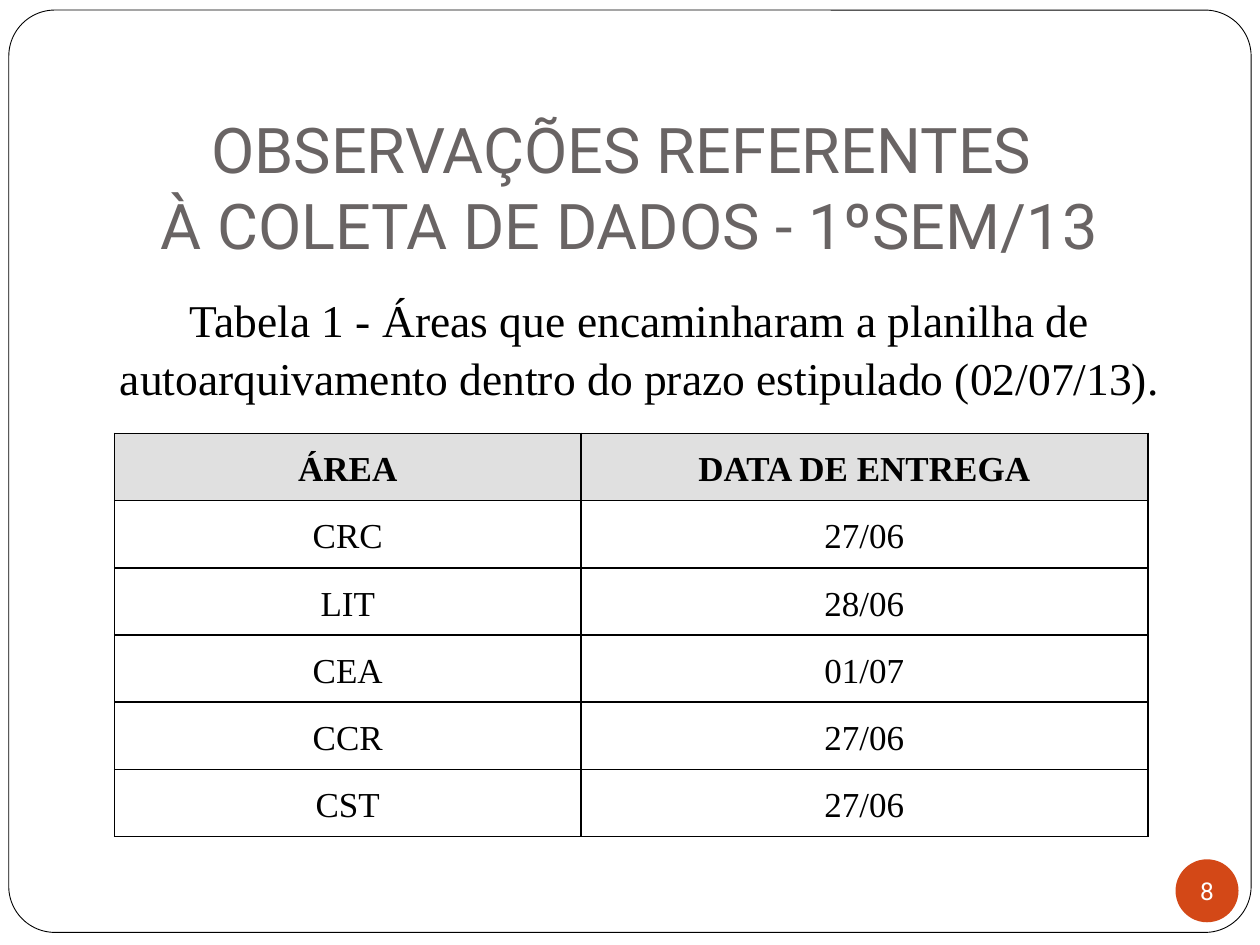
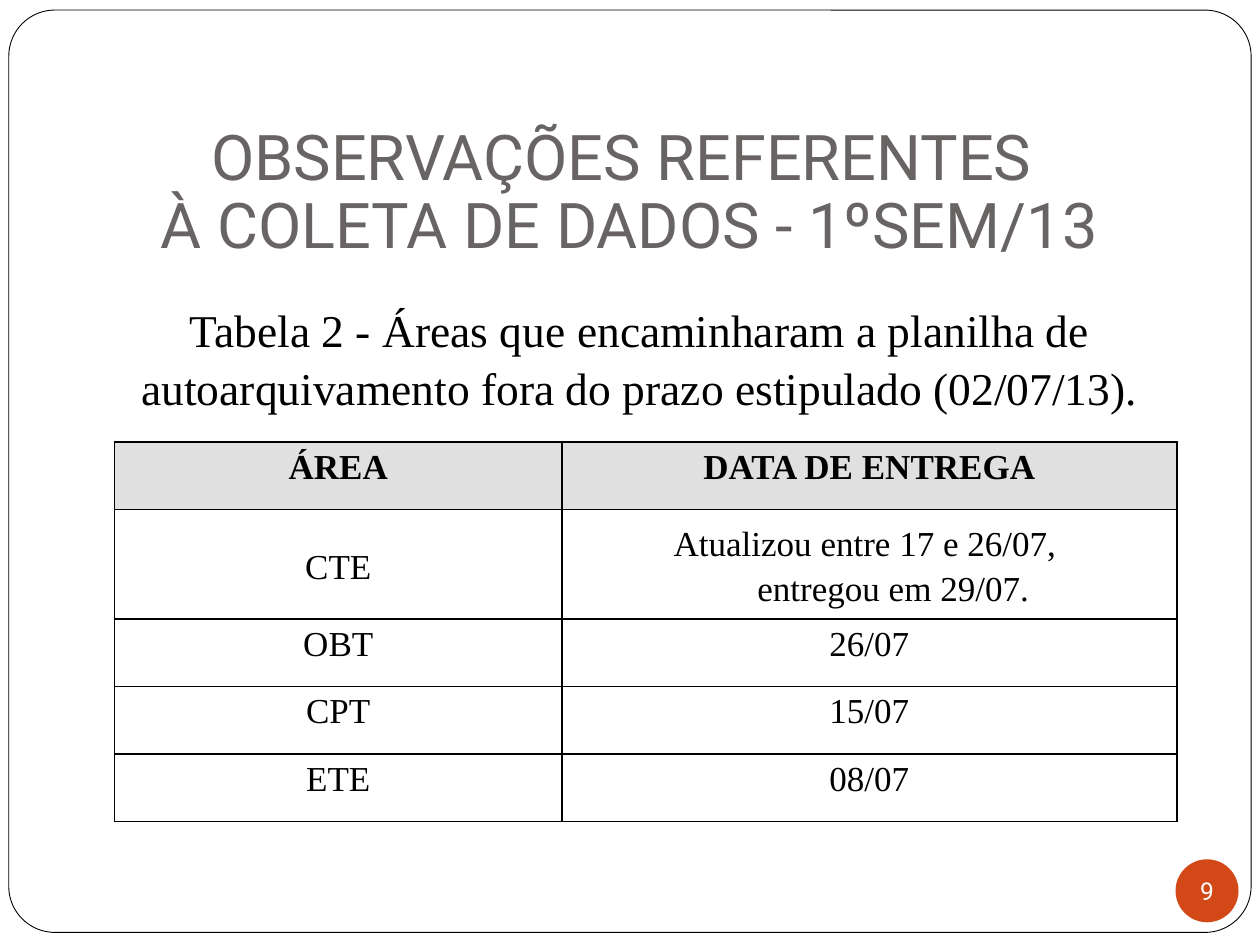
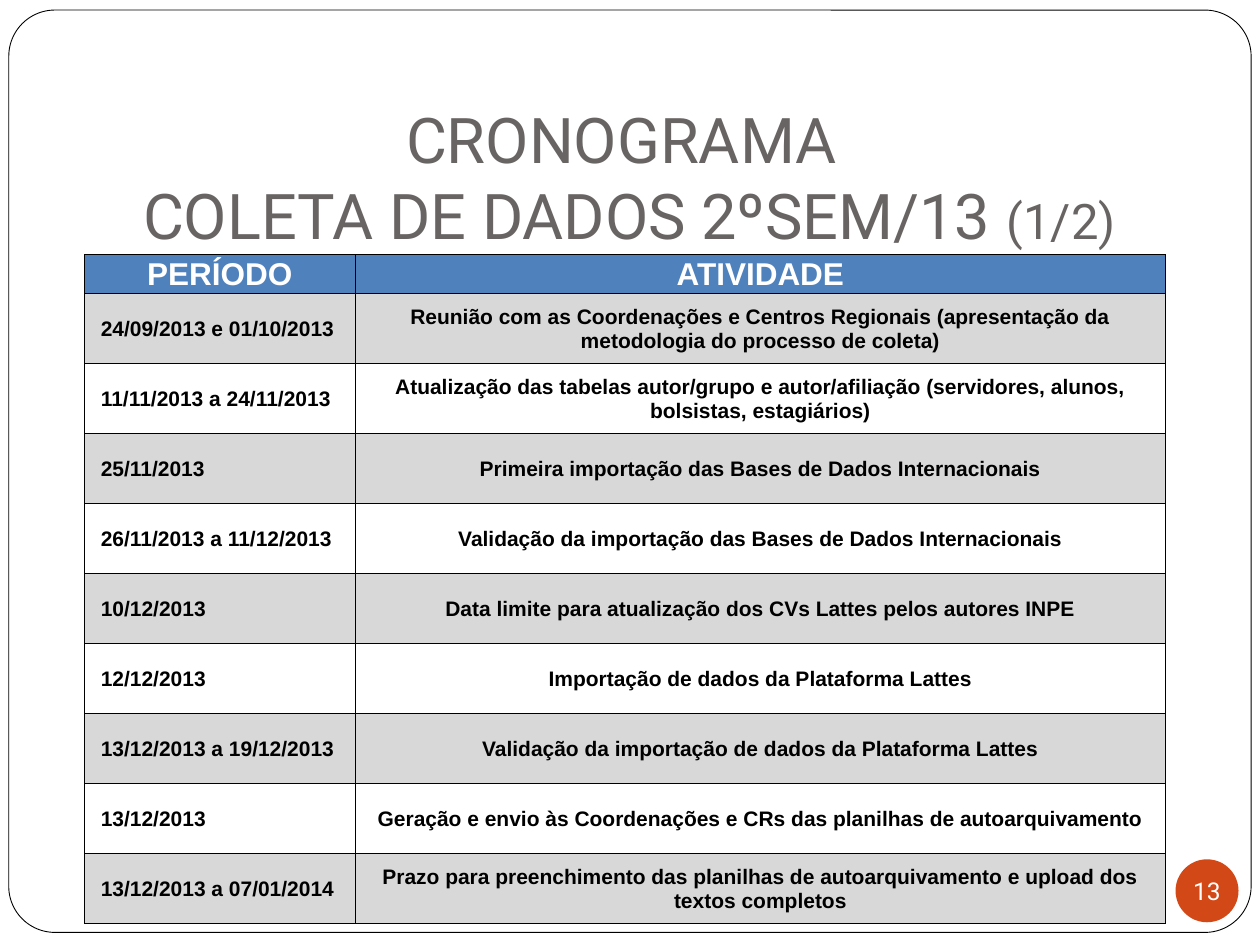
from dataclasses import dataclass

from lxml import etree
from pptx import Presentation
from pptx.dml.color import RGBColor
from pptx.enum.shapes import MSO_SHAPE
from pptx.enum.text import MSO_ANCHOR, PP_ALIGN
from pptx.oxml.ns import qn
from pptx.util import Inches, Pt


@dataclass(frozen=True)
class Theme:
    white: RGBColor = RGBColor.from_string("FFFFFF")
    black: RGBColor = RGBColor.from_string("000000")
    title_gray: RGBColor = RGBColor.from_string("696464")
    badge_orange: RGBColor = RGBColor.from_string("D34817")
    header_gray: RGBColor = RGBColor.from_string("E0E0E0")
    header_blue: RGBColor = RGBColor.from_string("4F81BD")
    band_gray: RGBColor = RGBColor.from_string("D8D8D8")
    title_font: str = "Roboto"
    body_font: str = "Times New Roman"
    schedule_font: str = "Arial"
    title_size: Pt = Pt(36)
    part_size: Pt = Pt(28)
    caption_size: Pt = Pt(26)
    cell_size: Pt = Pt(20)
    schedule_header_size: Pt = Pt(18)
    schedule_size: Pt = Pt(12)
    badge_size: Pt = Pt(14)


theme = Theme()

deliveries_title = "OBSERVAÇÕES REFERENTES \vÀ COLETA DE DADOS - 1ºSEM/13"
plain_row = (3.01 - 0.87) / 4
slides = [
    dict(
        number=8, title=deliveries_title, part="", title_top=0.92, title_spacing=1.0,
        caption="Tabela 1 - Áreas que encaminharam a planilha de autoarquivamento "
                "dentro do prazo estipulado (02/07/13).",
        caption_top=2.25, caption_height=1.65,
        table_left=0.91, table_top=3.44, columns=[3.7, 4.5], row_heights=[3.2 / 6] * 6,
        middle_rows=range(6),
        rows=[
            ("ÁREA", "DATA DE ENTREGA"),
            ("CRC", "27/06"),
            ("LIT", "28/06"),
            ("CEA", "01/07"),
            ("CCR", "27/06"),
            ("CST", "27/06"),
        ],
    ),
    dict(
        number=9, title=deliveries_title, part="", title_top=0.92, title_spacing=0.9,
        caption="Tabela 2 - Áreas que encaminharam a planilha de autoarquivamento "
                "fora do prazo estipulado (02/07/13).",
        caption_top=2.33, caption_height=1.3,
        table_left=0.91, table_top=3.51, columns=[3.55, 4.88],
        row_heights=[plain_row, 0.87] + [plain_row] * 3,
        middle_rows=[1],
        rows=[
            ("ÁREA", "DATA DE ENTREGA"),
            ("CTE", "Atualizou entre 17 e 26/07, \ventregou em 29/07."),
            ("OBT", "26/07"),
            ("CPT", "15/07"),
            ("ETE", "08/07"),
        ],
    ),
    dict(
        number=13, title="CRONOGRAMA \vCOLETA DE DADOS 2ºSEM/13 ", part="(1/2)",
        title_top=0.84, title_spacing=1.0, caption="",
        table_left=0.67, table_top=2.02, columns=[2.15, 6.43],
        row_heights=[0.28] + [5 / 9] * 9,
        middle_rows=range(10),
        rows=[
            ("PERÍODO", "ATIVIDADE"),
            ("24/09/2013 e 01/10/2013",
             "Reunião com as Coordenações e Centros Regionais (apresentação da "
             "metodologia do processo de coleta)"),
            ("11/11/2013 a 24/11/2013",
             "Atualização das tabelas autor/grupo e autor/afiliação (servidores, alunos, "
             "bolsistas, estagiários)"),
            ("25/11/2013", "Primeira importação das Bases de Dados Internacionais"),
            ("26/11/2013 a 11/12/2013",
             "Validação da importação das Bases de Dados Internacionais"),
            ("10/12/2013", "Data limite para atualização dos CVs Lattes pelos autores INPE"),
            ("12/12/2013", "Importação de dados da Plataforma Lattes"),
            ("13/12/2013 a 19/12/2013", "Validação da importação de dados da Plataforma Lattes"),
            ("13/12/2013",
             "Geração e envio às Coordenações e CRs das planilhas de autoarquivamento"),
            ("13/12/2013 a 07/01/2014",
             "Prazo para preenchimento das planilhas de autoarquivamento e upload dos "
             "textos completos"),
        ],
    ),
]


def style_paragraph(paragraph, font_name, size, color, bold=False, align=PP_ALIGN.CENTER):
    paragraph.alignment = align
    paragraph.font.name = font_name
    paragraph.font.size = size
    paragraph.font.bold = bold
    paragraph.font.color.rgb = color


def set_cell_borders(cell, width):
    """Draw all four sides in black; borders must precede the fill in the XML."""
    properties = cell._tc.get_or_add_tcPr()
    for index, side in enumerate(("a:lnL", "a:lnR", "a:lnT", "a:lnB")):
        line = etree.Element(qn(side), w=str(width))
        fill = etree.SubElement(line, qn("a:solidFill"))
        etree.SubElement(fill, qn("a:srgbClr"), val=str(theme.black))
        properties.insert(index, line)


presentation = Presentation()
presentation.slide_width = Inches(10)
presentation.slide_height = Inches(7.5)

for content in slides:
    slide = presentation.slides.add_slide(presentation.slide_layouts[6])
    is_schedule = not content["caption"]

    # Frame
    frame = slide.shapes.add_shape(
        MSO_SHAPE.ROUNDED_RECTANGLE, Inches(0.07), Inches(0.08), Inches(9.86), Inches(7.32))
    frame.adjustments[0] = 0.05
    frame.shadow.inherit = False
    frame.fill.solid()
    frame.fill.fore_color.rgb = theme.white
    frame.line.color.rgb = theme.black
    frame.line.width = Pt(0.5)

    # Title
    title = slide.shapes.add_textbox(
        Inches(0.51), Inches(content["title_top"]), Inches(8.97), Inches(1.26))
    text_frame = title.text_frame
    text_frame.word_wrap = True
    text_frame.vertical_anchor = MSO_ANCHOR.BOTTOM
    text_frame.margin_bottom = Inches(0.1)
    paragraph = text_frame.paragraphs[0]
    paragraph.text = content["title"]
    paragraph.line_spacing = content["title_spacing"]
    style_paragraph(paragraph, theme.title_font, theme.title_size, theme.title_gray)
    if content["part"]:
        part = paragraph.add_run()
        part.text = content["part"]
        part.font.size = theme.part_size

    # Page number
    badge = slide.shapes.add_shape(
        MSO_SHAPE.OVAL, Inches(9.33), Inches(6.82), Inches(0.5), Inches(0.5))
    badge.shadow.inherit = False
    badge.fill.solid()
    badge.fill.fore_color.rgb = theme.badge_orange
    badge.line.fill.background()
    text_frame = badge.text_frame
    text_frame.word_wrap = False
    text_frame.vertical_anchor = MSO_ANCHOR.MIDDLE
    text_frame.margin_left = text_frame.margin_right = 0
    text_frame.margin_top = text_frame.margin_bottom = 0
    paragraph = text_frame.paragraphs[0]
    paragraph.text = str(content["number"])
    style_paragraph(paragraph, theme.title_font, theme.badge_size, theme.white)

    # Caption
    if content["caption"]:
        caption = slide.shapes.add_textbox(
            Inches(0.83), Inches(content["caption_top"]),
            Inches(8.5), Inches(content["caption_height"]))
        caption.text_frame.word_wrap = True
        paragraph = caption.text_frame.paragraphs[0]
        paragraph.text = content["caption"]
        paragraph.line_spacing = 1.05
        style_paragraph(paragraph, theme.body_font, theme.caption_size, theme.black)

    # Table
    rows, columns, row_heights = content["rows"], content["columns"], content["row_heights"]
    table = slide.shapes.add_table(
        len(rows), len(columns), Inches(content["table_left"]), Inches(content["table_top"]),
        Inches(sum(columns)), Inches(sum(row_heights))).table
    for column, width in zip(table.columns, columns):
        column.width = Inches(width)
    for row_index, (row, height) in enumerate(zip(table.rows, row_heights)):
        row.height = Inches(height)
        is_header = row_index == 0
        for column_index, cell in enumerate(row.cells):
            paragraph = cell.text_frame.paragraphs[0]
            paragraph.text = rows[row_index][column_index]
            if row_index in content["middle_rows"]:
                cell.vertical_anchor = MSO_ANCHOR.MIDDLE
            cell.margin_bottom = 0

            if is_schedule:
                is_period = column_index == 0 and not is_header
                cell.margin_left = Inches(0.13 if is_period else 0.01)
                cell.margin_right = cell.margin_top = Inches(0.01)
                style_paragraph(
                    paragraph, theme.schedule_font,
                    theme.schedule_header_size if is_header else theme.schedule_size,
                    theme.white if is_header else theme.black, bold=True,
                    align=PP_ALIGN.LEFT if is_period else PP_ALIGN.CENTER)
                band = theme.band_gray if row_index % 2 else None
                fill_color = theme.header_blue if is_header else band
            else:
                cell.margin_left = cell.margin_right = Inches(0.07)
                cell.margin_top = 0
                indent = Inches(0.38)
                paragraph_properties = paragraph._p.get_or_add_pPr()
                paragraph_properties.set("marL", str(indent))
                paragraph_properties.set("indent", str(-indent))
                paragraph.line_spacing = 1.15
                style_paragraph(
                    paragraph, theme.body_font, theme.cell_size, theme.black, bold=is_header)
                fill_color = theme.header_gray if is_header else None

            if fill_color is None:
                cell.fill.background()
            else:
                cell.fill.solid()
                cell.fill.fore_color.rgb = fill_color
            set_cell_borders(cell, Pt(0.5) if is_schedule else Pt(1))

presentation.save("out.pptx")
